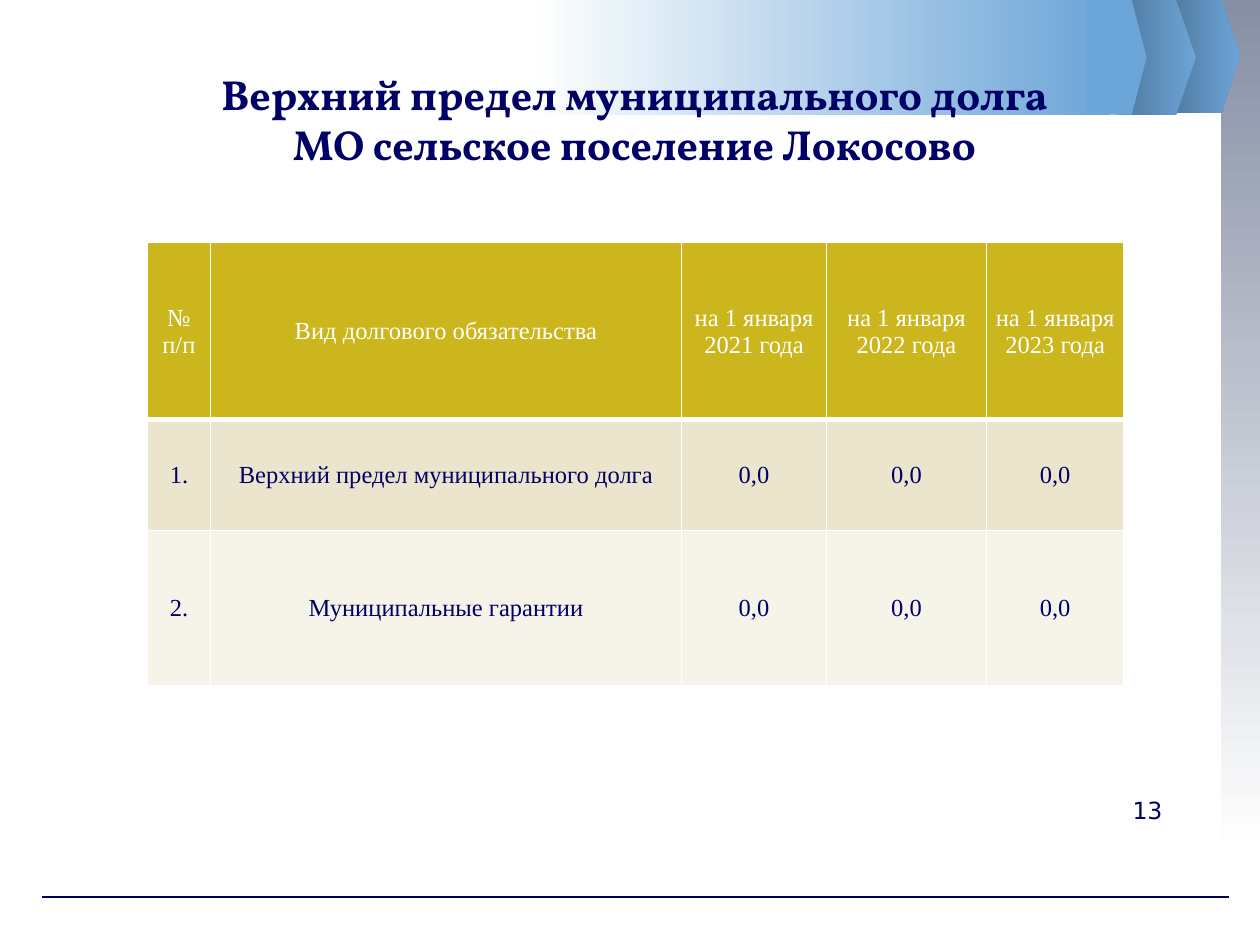
from dataclasses import dataclass

from lxml import etree
from pptx import Presentation
from pptx.dml.color import RGBColor
from pptx.enum import shapes, text
from pptx.oxml import ns
from pptx.util import Inches, Pt


@dataclass(frozen=True)
class Theme:
    navy: str = "000066"
    white: str = "FFFFFF"
    sky: str = "6CA5D8"
    steel: str = "4D769B"
    slate: str = "878FA5"
    header: str = "CBB61D"
    bands: tuple = ("ECE5CD", "F6F3E8")
    title_font: str = "Vollkorn"
    table_font: str = "Times New Roman"
    number_font: str = "DejaVu Sans"
    title_size: float = 24
    table_size: float = 14
    number_size: float = 13.5


THEME = Theme()
RECTANGLE = shapes.MSO_SHAPE.RECTANGLE
PENTAGON = shapes.MSO_SHAPE.PENTAGON

TITLE = "Верхний предел муниципального долга\vМО сельское поселение Локосово"
COLUMN_WIDTHS = (0.5, 3.74, 1.15, 1.27, 1.09)
ROW_HEIGHTS = (1.41, 0.88, 1.23)
ROWS = (
    ("№ п/п", "Вид долгового обязательства",
     *(f"на 1 января {year} года" for year in (2021, 2022, 2023))),
    ("1.", "Верхний предел муниципального долга", "0,0", "0,0", "0,0"),
    ("2.", "Муниципальные гарантии", "0,0", "0,0", "0,0"),
)


def rgb(color):
    return RGBColor.from_string(color)


def place(shape, left, top, width, height):
    shape.left, shape.top = Inches(left), Inches(top)
    shape.width, shape.height = Inches(width), Inches(height)


def format_text(text_frame, font, size, color, bold=False, align=None):
    for paragraph in text_frame.paragraphs:
        paragraph.alignment = align
        for run in paragraph.runs:
            run.font.name = font
            run.font.size = Pt(size)
            run.font.bold = bold
            run.font.color.rgb = rgb(color)


def add_block(slide, kind, box, colors, angle=0):
    """One colour gives a solid fill, two give a gradient."""
    shape = slide.shapes.add_shape(kind, *map(Inches, box))
    shape.shadow.inherit = False
    shape.line.fill.background()
    if kind == PENTAGON:
        shape.adjustments[0] = 0.25
    if len(colors) == 1:
        shape.fill.solid()
        shape.fill.fore_color.rgb = rgb(colors[0])
    else:
        shape.fill.gradient()
        shape.fill.gradient_angle = angle
        for stop, color in zip(shape.fill.gradient_stops, colors):
            stop.color.rgb = rgb(color)


def add_rule(slide, left, right, y):
    line = slide.shapes.add_connector(
        shapes.MSO_CONNECTOR.STRAIGHT,
        Inches(left), Inches(y), Inches(right), Inches(y))
    line.line.color.rgb = rgb(THEME.navy)
    line.line.width = Pt(0.75)
    etree.SubElement(line.element.spPr, ns.qn("a:effectLst"))


def add_decoration(slide):
    add_block(slide, RECTANGLE, (9.69, 0, 0.31, 6.77),
              (THEME.slate, THEME.white), angle=270)
    add_rule(slide, 0.33, 9.75, 7.12)
    # Each arrow overlaps the one behind it
    for box in ((9.25, -0.01, 0.59, 0.91), (8.86, 0, 0.63, 0.91)):
        add_block(slide, PENTAGON, box, (THEME.steel, THEME.sky))
    add_block(slide, RECTANGLE, (4.21, 0, 4.6, 0.91), (THEME.white, THEME.sky))
    add_block(slide, PENTAGON, (8.63, 0, 0.47, 0.91), (THEME.sky,))


def set_title(slide):
    title = slide.shapes.title
    place(title, 1.17, 0.47, 7.73, 0.94)
    title.text_frame.text = TITLE
    title.text_frame.vertical_anchor = text.MSO_ANCHOR.MIDDLE
    format_text(title.text_frame, THEME.title_font, THEME.title_size,
                THEME.navy, bold=True, align=text.PP_ALIGN.CENTER)
    # Bring the title in front of the banner
    slide.shapes.element.append(title.element)


def set_borders(cell, bottom_width):
    properties = cell._tc.get_or_add_tcPr()
    for side, width in (("L", 1), ("R", 1), ("T", 1), ("B", bottom_width)):
        border = etree.SubElement(properties, ns.qn(f"a:ln{side}"), w=str(Pt(width)))
        fill = etree.SubElement(border, ns.qn("a:solidFill"))
        etree.SubElement(fill, ns.qn("a:srgbClr"), val=THEME.white)


def format_cell(cell, fill, color, bottom_width):
    set_borders(cell, bottom_width)
    cell.fill.solid()
    cell.fill.fore_color.rgb = rgb(fill)
    cell.vertical_anchor = text.MSO_ANCHOR.MIDDLE
    cell.margin_left = cell.margin_right = cell.margin_top = Inches(0.01)
    cell.margin_bottom = 0
    format_text(cell.text_frame, THEME.table_font, THEME.table_size, color,
                align=text.PP_ALIGN.CENTER)


def add_debt_table(slide):
    table = slide.shapes.add_table(
        len(ROWS), len(COLUMN_WIDTHS), Inches(1.17), Inches(1.92),
        Inches(sum(COLUMN_WIDTHS)), Inches(sum(ROW_HEIGHTS))).table
    for column, width in zip(table.columns, COLUMN_WIDTHS):
        column.width = Inches(width)
    for row, height in zip(table.rows, ROW_HEIGHTS):
        row.height = Inches(height)
    for row_index, values in enumerate(ROWS):
        is_header = row_index == 0
        fill = THEME.header if is_header else THEME.bands[row_index - 1]
        color = THEME.white if is_header else THEME.navy
        for column_index, value in enumerate(values):
            cell = table.cell(row_index, column_index)
            cell.text_frame.text = value
            format_cell(cell, fill, color, 3 if is_header else 1)
            if row_index == 1:
                # Match the thick edge below the header
                top = cell._tc.tcPr.find(ns.qn("a:lnT"))
                top.set("w", str(Pt(3)))


def add_page_number(slide):
    box = slide.shapes.add_textbox(*map(Inches, (8.89, 6.27, 0.67, 0.57)))
    box.text_frame.word_wrap = True
    box.text_frame.text = "13"
    format_text(box.text_frame, THEME.number_font, THEME.number_size, THEME.navy)


def main():
    presentation = Presentation()
    presentation.slide_width, presentation.slide_height = Inches(10), Inches(7.5)
    slide = presentation.slides.add_slide(presentation.slide_layouts[5])
    add_decoration(slide)
    set_title(slide)
    add_debt_table(slide)
    add_page_number(slide)
    presentation.save("out.pptx")


if __name__ == "__main__":
    main()
